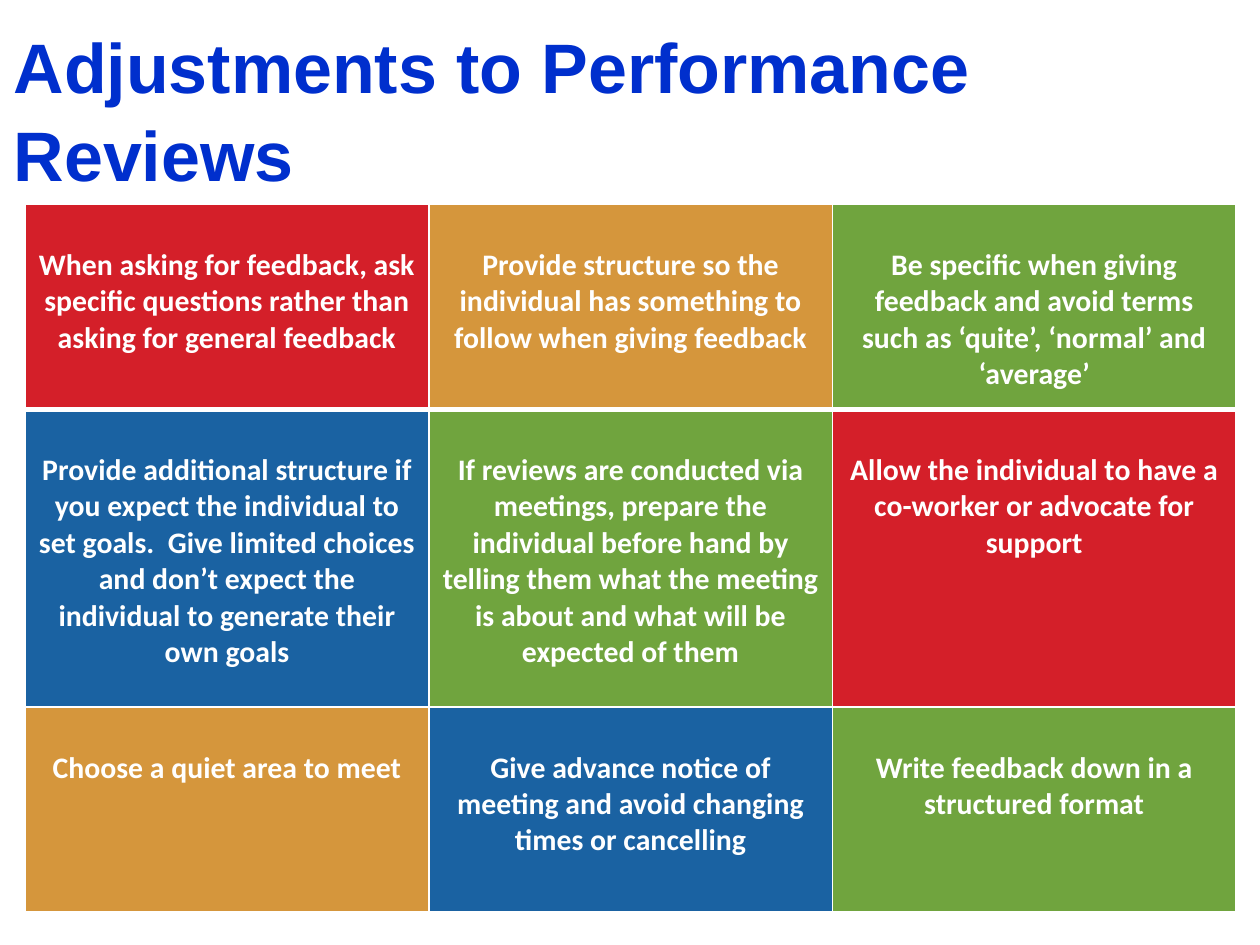
from lxml import etree
from pptx import Presentation, util as u
from pptx.dml.color import RGBColor
from pptx.enum import text
from pptx.oxml import ns

WHITE = RGBColor(0xFF, 0xFF, 0xFF)
TITLE_BLUE = RGBColor(0x00, 0x2F, 0xCD)
RED = RGBColor(0xD4, 0x1F, 0x29)
AMBER = RGBColor(0xD5, 0x96, 0x3C)
GREEN = RGBColor(0x70, 0xA4, 0x3E)
BLUE = RGBColor(0x1A, 0x62, 0xA2)

SLIDE_WIDTH, SLIDE_HEIGHT = u.Inches(10), u.Inches(7.5)
TITLE_BOX = [u.Inches(n) for n in (0.01, 0.13, 9.99, 1.45)]
ADVICE_BOX = [u.Inches(n) for n in (0.2, 1.62, 9.61, 5.62)]
ROW_SHARES = (0.29, 0.42, 0.29)

TITLE_FONT = {"name": "Arial", "size": u.Pt(40), "bold": True}
ADVICE_FONT = {"name": "Calibri", "size": u.Pt(17), "bold": True}
ADVICE_CELL = {"margin_top": u.Inches(0.34), "margin_bottom": u.Inches(0.05)}

ADVICE = [
    [("When asking for feedback, ask specific questions rather than asking for general feedback", RED),
     ("Provide structure so the individual has something to follow when giving feedback", AMBER),
     ("Be specific when giving feedback and avoid terms such as ‘quite’, ‘normal’ and ‘average’", GREEN)],
    [("Provide additional structure if you expect the individual to set goals.  Give limited choices "
      "and don’t expect the individual to generate their own goals", BLUE),
     ("If reviews are conducted via meetings, prepare the individual before hand by telling them "
      "what the meeting is about and what will be expected of them", GREEN),
     ("Allow the individual to have a co-worker or advocate for support", RED)],
    [("Choose a quiet area to meet", AMBER),
     ("Give advance notice of meeting and avoid changing times or cancelling", BLUE),
     ("Write feedback down in a structured format", GREEN)],
]


def apply_format(target, values):
    for name, value in values.items():
        setattr(target, name, value)


def write(paragraph, wording, font_values, color):
    run = paragraph.add_run()
    run.text = wording
    apply_format(run.font, font_values)
    run.font.color.rgb = color


def add_borders(cell, widths):
    properties = cell._tc.get_or_add_tcPr()
    for side, width in widths.items():
        line = etree.SubElement(properties, ns.qn(f"a:ln{side}"), w=str(u.Pt(width)))
        fill = etree.SubElement(line, ns.qn("a:solidFill"))
        etree.SubElement(fill, ns.qn("a:srgbClr"), val=str(WHITE))


def add_title(slide, box):
    frame = slide.shapes.add_textbox(*box).text_frame
    apply_format(frame, {"word_wrap": True, "vertical_anchor": text.MSO_ANCHOR.MIDDLE})
    heading = frame.paragraphs[0]
    heading.line_spacing = 1.05
    write(heading, "Adjustments to Performance Reviews", TITLE_FONT, TITLE_BLUE)


def add_advice(slide, box):
    width, height = box[2:]
    advice = slide.shapes.add_table(len(ADVICE), len(ADVICE[0]), *box).table
    for column in advice.columns:
        column.width = int(width / len(ADVICE[0]))
    for row, share in zip(advice.rows, ROW_SHARES):
        row.height = int(height * share)
    for r, entries in enumerate(ADVICE):
        for c, (wording, color) in enumerate(entries):
            cell = advice.cell(r, c)
            apply_format(cell, ADVICE_CELL)
            add_borders(cell, {"L": 1, "R": 1, "T": 3 if r == 1 else 1, "B": 3 if r == 0 else 1})
            cell.fill.solid()
            cell.fill.fore_color.rgb = color
            paragraph = cell.text_frame.paragraphs[0]
            paragraph.alignment = text.PP_ALIGN.CENTER
            write(paragraph, wording, ADVICE_FONT, WHITE)


def main():
    deck = Presentation()
    apply_format(deck, {"slide_width": SLIDE_WIDTH, "slide_height": SLIDE_HEIGHT})
    slide = deck.slides.add_slide(deck.slide_layouts[6])
    add_title(slide, TITLE_BOX)
    add_advice(slide, ADVICE_BOX)
    deck.save("out.pptx")


if __name__ == "__main__":
    main()
